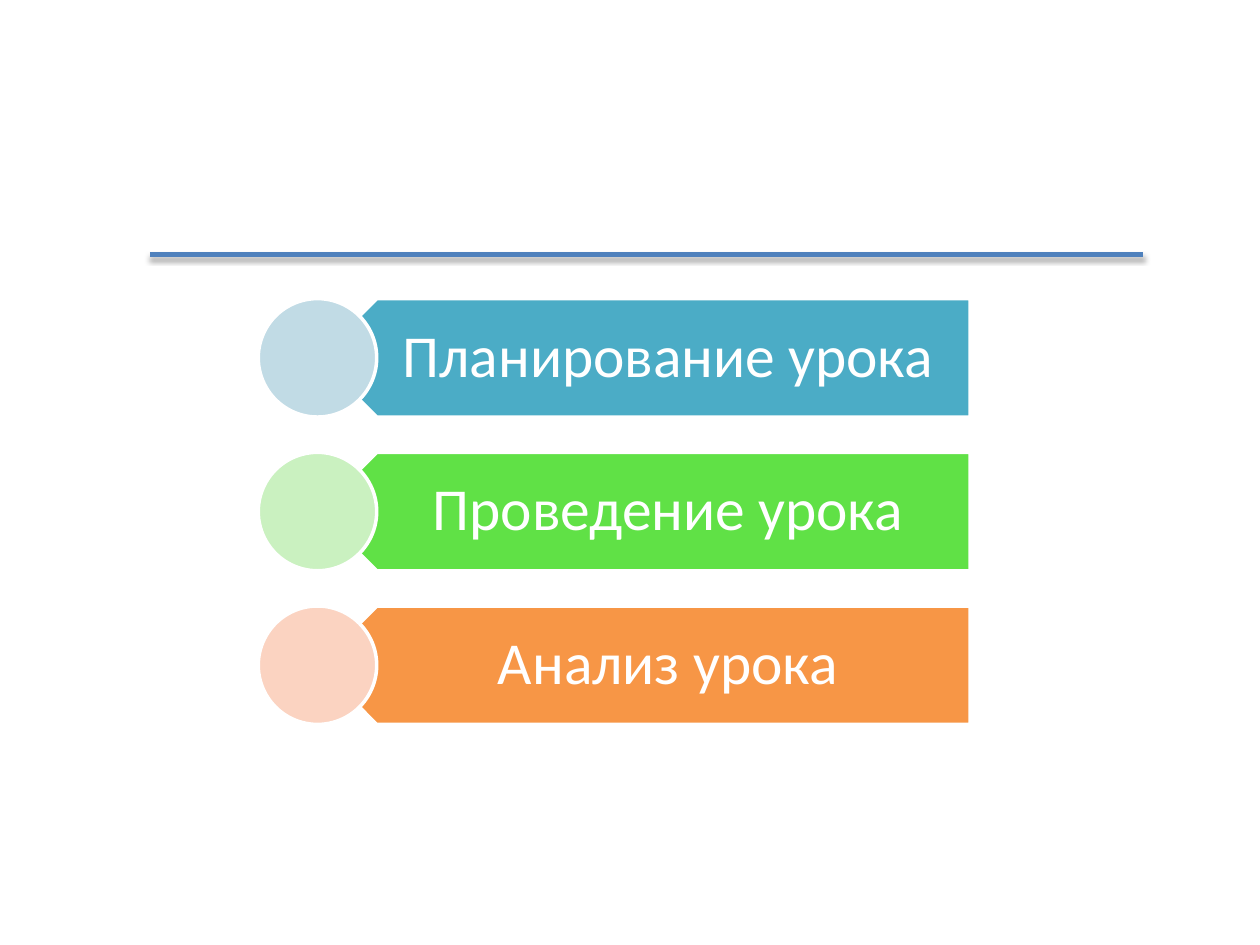
from lxml import etree
from pptx import Presentation
from pptx.dml.color import RGBColor
from pptx.enum.shapes import MSO_CONNECTOR, MSO_SHAPE
from pptx.enum.text import MSO_ANCHOR, PP_ALIGN
from pptx.oxml.ns import nsdecls
from pptx.util import Inches, Pt

COLORS = {
    "rule": "4F81BD", "white": "FFFFFF",
    "teal": "4BACC6", "teal_light": "C1DBE5",
    "green": "60E146", "green_light": "CAF1C0",
    "orange": "F79646", "orange_light": "FBD3C1",
}
STAGES = [
    ("Планирование урока", "teal"),
    ("Проведение урока", "green"),
    ("Анализ урока", "orange"),
]
ROW_HEIGHT = 0.94
ROW_STEP = 1.22
SHADOW = f"""<a:effectLst {nsdecls('a')}>
  <a:outerShdw blurRad="{Pt(3.1)}" dist="{Pt(1.8)}" dir="5400000" rotWithShape="0">
    <a:srgbClr val="000000"><a:alpha val="35000"/></a:srgbClr>
  </a:outerShdw>
</a:effectLst>"""


def rgb(name):
    return RGBColor.from_string(COLORS[name])


def set_attrs(obj, values):
    for name, value in values.items():
        setattr(obj, name, value)


def add_rule(slide, left, top, width):
    """Draw the horizontal rule with its soft shadow below."""
    line = slide.shapes.add_connector(
        MSO_CONNECTOR.STRAIGHT,
        Inches(left), Inches(top), Inches(left + width), Inches(top))
    line.line.color.rgb = rgb("rule")
    line.line.width = Pt(2.5)
    line._element.spPr.append(etree.fromstring(SHADOW))


def add_outlined_shape(slide, kind, box, color):
    sp = slide.shapes.add_shape(kind, *map(Inches, box))
    sp.shadow.inherit = False
    sp.fill.solid()
    sp.fill.fore_color.rgb = rgb(color)
    sp.line.color.rgb = rgb("white")
    sp.line.width = Pt(2)
    return sp


def add_label(slide, box, text):
    tf = slide.shapes.add_textbox(*map(Inches, box)).text_frame
    set_attrs(tf, {
        "word_wrap": True, "vertical_anchor": MSO_ANCHOR.MIDDLE,
        "margin_left": Inches(0.41), "margin_right": Inches(0.26),
        "margin_top": Inches(0.14), "margin_bottom": Inches(0.14),
    })
    p = tf.paragraphs[0]
    set_attrs(p, {"alignment": PP_ALIGN.CENTER, "line_spacing": 0.9})
    r = p.add_run()
    r.text = text
    set_attrs(r.font, {"name": "Calibri", "size": Pt(34)})
    r.font.color.rgb = rgb("white")


def add_stage(slide, left, top, width, height, text, color):
    """Place a left-pointing bar, its label and the circle over its tip."""
    radius = height / 2
    bar_left = left + radius
    bar_width = width - radius
    bar = add_outlined_shape(
        slide, MSO_SHAPE.PENTAGON, (bar_left, top, bar_width, height), color)
    bar.rotation = 180
    inset = height / 4
    add_label(slide, (bar_left + inset, top, bar_width - inset, height), text)
    add_outlined_shape(
        slide, MSO_SHAPE.OVAL, (left, top, height, height), f"{color}_light")


def add_stage_list(slide, left, top, width):
    for i, (text, color) in enumerate(STAGES):
        add_stage(slide, left, top + i * ROW_STEP, width, ROW_HEIGHT, text, color)


def main():
    prs = Presentation()
    prs.slide_width, prs.slide_height = Inches(10), Inches(7.5)
    slide = prs.slides.add_slide(prs.slide_layouts[6])
    add_rule(slide, 1.19, 2.02, 7.88)
    add_stage_list(slide, 2.05, 2.37, 5.65)
    prs.save("out.pptx")


if __name__ == "__main__":
    main()
